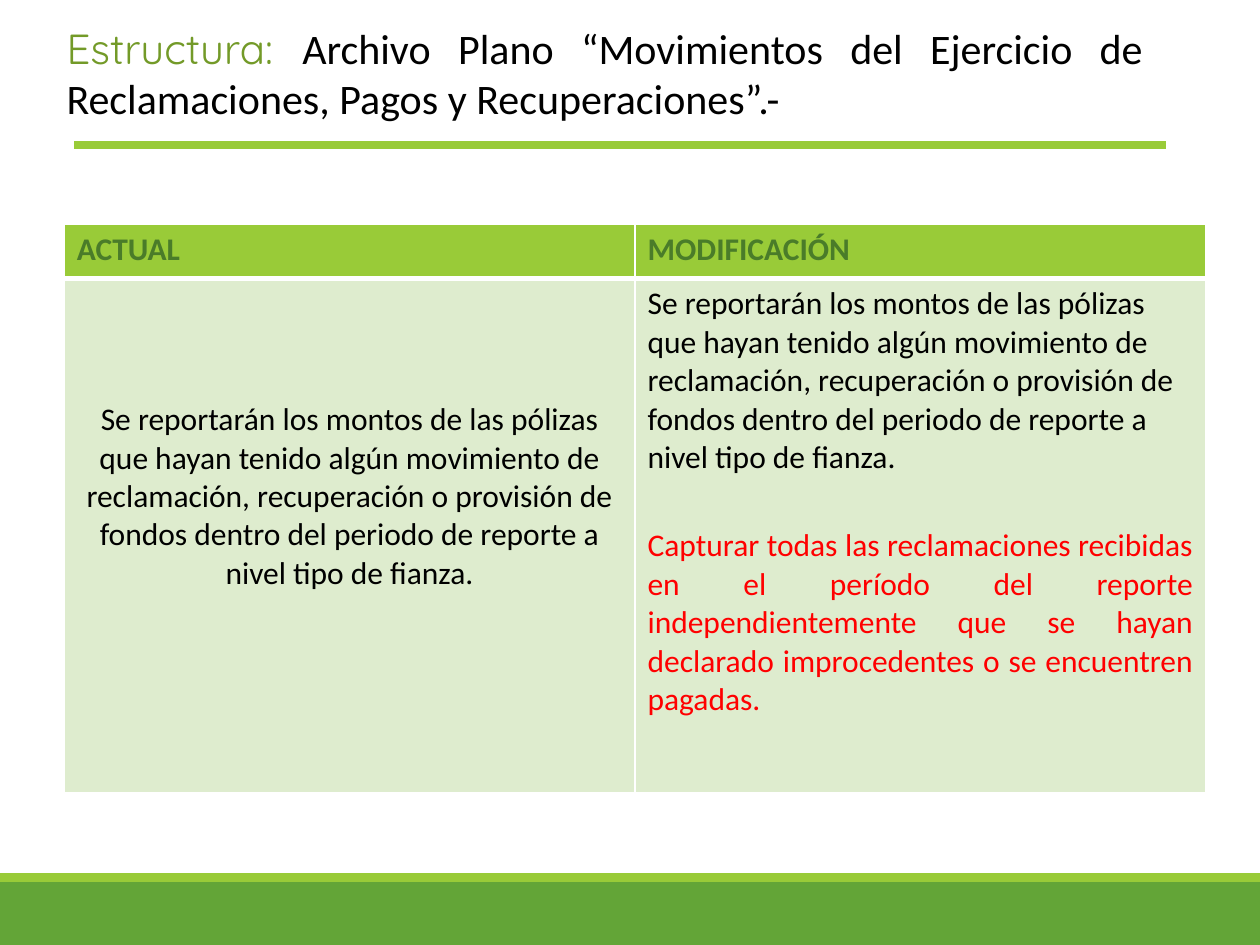
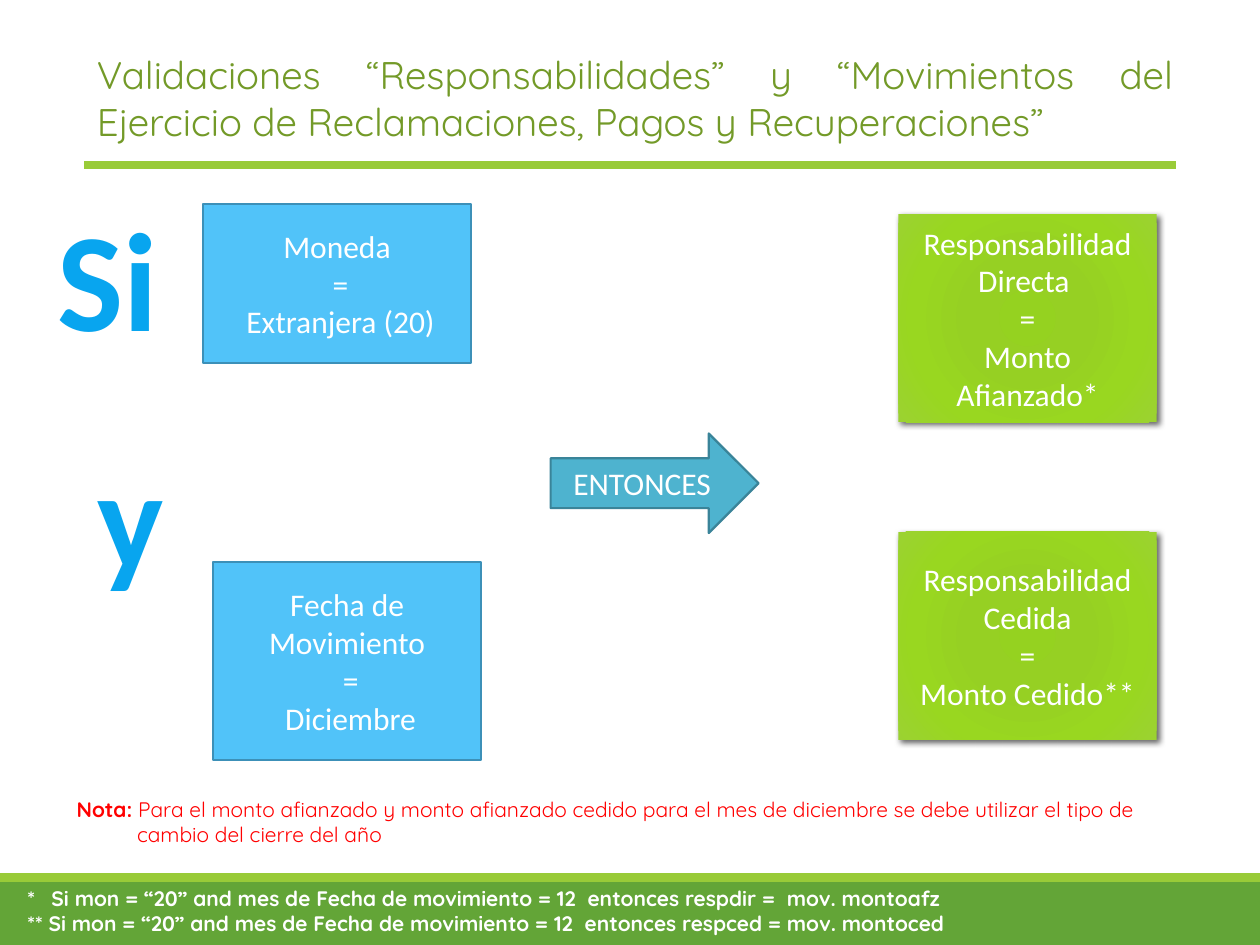
from dataclasses import dataclass

from pptx import Presentation
from pptx.dml.color import RGBColor
from pptx.enum.shapes import MSO_CONNECTOR as Connector, MSO_SHAPE as Shape
from pptx.enum.text import MSO_ANCHOR as Anchor, PP_ALIGN as Align
from pptx.oxml import parse_xml
from pptx.oxml.ns import nsdecls
from pptx.util import Inches, Pt


@dataclass(frozen=True)
class Theme:
    body_font: str = "Calibri"
    title_font: str = "Quicksand"
    white: str = "FFFFFF"
    black: str = "000000"
    red: str = "FF0000"
    band: str = "63A537"
    lime: str = "99CB38"
    title: str = "739A28"
    header_text: str = "4A7C29"
    cell: str = "DEECCE"
    condition: str = "51C3F9"
    condition_line: str = "3C90B8"
    arrow: str = "4EB3CF"
    arrow_line: str = "3A8499"
    keyword: str = "08A5EF"
    glow: tuple = ((0, "95D220"), (34, "96D023"), (70, "99D720"), (100, "9BD231"))
    title_size: float = 24
    long_title_size: float = 22
    body_size: float = 18
    note_size: float = 12
    keyword_size: float = 80


THEME = Theme()


def color(value):
    return RGBColor.from_string(value)


def inches(*lengths):
    return [Inches(length) for length in lengths]


# Text
def add_span(para, text, font=THEME.body_font, size=THEME.body_size,
             fill=THEME.black, bold=False):
    span = para.add_run()
    span.text = text
    span.font.name = font
    span.font.size = Pt(size)
    span.font.bold = bold
    span.font.color.rgb = color(fill)


def write(frame, paragraphs, align=Align.LEFT, **style):
    """Each paragraph is a string or a list of (text, style changes) pairs."""
    for index, content in enumerate(paragraphs):
        para = frame.add_paragraph() if index else frame.paragraphs[0]
        para.alignment = align
        spans = [(content, {})] if isinstance(content, str) else content
        for text, changes in spans:
            add_span(para, text, **{**style, **changes})


def add_text(page, place, paragraphs, wrap=True, **style):
    box = page.shapes.add_textbox(*inches(*place))
    box.text_frame.word_wrap = wrap
    write(box.text_frame, paragraphs, **style)
    return box


def hang(para, depth):
    properties = para._p.get_or_add_pPr()
    properties.set("marL", str(Inches(depth)))
    properties.set("indent", str(-Inches(depth)))


# Shapes
def add_box(page, place, paragraphs=(), kind=Shape.FLOWCHART_PROCESS,
            fill=None, line=None):
    box = page.shapes.add_shape(kind, *inches(*place))
    box.shadow.inherit = False
    if fill:
        box.fill.solid()
        box.fill.fore_color.rgb = color(fill)
    if line:
        box.line.color.rgb = color(line)
        box.line.width = Pt(1.25)
    else:
        box.line.fill.background()
    box.text_frame.word_wrap = True
    box.text_frame.vertical_anchor = Anchor.MIDDLE
    write(box.text_frame, paragraphs, align=Align.CENTER, fill=THEME.white)
    return box


def add_result(page, place, paragraphs):
    """A box with a radial gradient and a soft shadow."""
    box = add_box(page, place, paragraphs)
    stops = "".join(f'<a:gs pos="{pos * 1000}"><a:srgbClr val="{value}"/></a:gs>'
                    for pos, value in THEME.glow)
    gradient = parse_xml(
        f'<a:gradFill {nsdecls("a")} rotWithShape="1"><a:gsLst>{stops}</a:gsLst>'
        '<a:path path="circle"><a:fillToRect l="100000" t="100000" r="100000"'
        ' b="100000"/></a:path></a:gradFill>')
    shadow = parse_xml(
        f'<a:outerShdw {nsdecls("a")} blurRad="{Pt(3.5)}" dist="{Pt(2)}"'
        ' dir="2700000" algn="tl" rotWithShape="0"><a:srgbClr val="000000">'
        '<a:alpha val="60000"/></a:srgbClr></a:outerShdw>')
    box.line._ln.addprevious(gradient)
    box._element.spPr.find("{*}effectLst").append(shadow)


def add_rule(page, left, top, right):
    rule = page.shapes.add_connector(Connector.STRAIGHT,
                                     *inches(left, top, right, top))
    rule.line.color.rgb = color(THEME.lime)
    rule.line.width = Pt(4.5)
    rule._element.spPr.append(parse_xml(f'<a:effectLst {nsdecls("a")}/>'))


# Table
def format_cell(cell, fill, bottom=1):
    cell.fill.solid()
    cell.fill.fore_color.rgb = color(fill)
    widths = {"lnL": 1, "lnR": 1, "lnT": 1, "lnB": bottom}
    for position, (side, width) in enumerate(widths.items()):
        cell._tc.get_or_add_tcPr().insert(position, parse_xml(
            f'<a:{side} {nsdecls("a")} w="{Pt(width)}"><a:solidFill>'
            f'<a:srgbClr val="{THEME.white}"/></a:solidFill></a:{side}>'))


def add_comparison(page, place, row_heights, headers, current, changed):
    table = page.shapes.add_table(2, 2, *inches(*place)).table
    for row, height in zip(table.rows, row_heights):
        row.height = Inches(height)
    for column, header in enumerate(headers):
        cell = table.cell(0, column)
        format_cell(cell, THEME.lime, bottom=3)
        write(cell.text_frame, [header], fill=THEME.header_text, bold=True)

    before, after = table.cell(1, 0), table.cell(1, 1)
    for cell in (before, after):
        format_cell(cell, THEME.cell)
    before.margin_top = Inches(0.97)
    write(before.text_frame, [current], align=Align.CENTER)
    write(after.text_frame, [current, [(changed, {"fill": THEME.red})]])
    first, second = after.text_frame.paragraphs
    first.space_after = Pt(28.5)
    second.alignment = Align.JUSTIFY


# Slides
def add_page(deck, title_place, title, title_size, rule):
    page = deck.slides.add_slide(deck.slide_layouts[6])
    add_box(page, (0, 7, 10, 0.5), kind=Shape.RECTANGLE, fill=THEME.band)
    add_box(page, (0, 6.93, 10, 0.07), kind=Shape.RECTANGLE, fill=THEME.lime)
    add_rule(page, *rule)
    add_text(page, title_place, [title], align=Align.JUSTIFY,
             font=THEME.title_font, size=title_size, fill=THEME.title)
    return page


def build_structure(deck):
    title = [("Estructura: ", {}),
             ("Archivo Plano “Movimientos del Ejercicio de Reclamaciones, "
              "Pagos y Recuperaciones”.-",
              {"font": THEME.body_font, "fill": THEME.black})]
    page = add_page(deck, (0.43, 0.13, 8.74, 0.91), title, THEME.title_size,
                    rule=(0.59, 1.15, 9.25))
    add_comparison(
        page, (0.51, 1.78, 9.06, 4.51), (0.43, 4.08),
        headers=("ACTUAL", "MODIFICACIÓN"),
        current="Se reportarán los montos de las pólizas que hayan tenido algún "
                "movimiento de reclamación, recuperación o provisión de fondos "
                "dentro del periodo de reporte a nivel tipo de fianza.",
        changed="Capturar todas las reclamaciones recibidas en el período del "
                "reporte independientemente que se hayan declarado "
                "improcedentes o se encuentren pagadas.")


def build_validations(deck):
    page = add_page(deck, (0.67, 0.36, 8.74, 0.84),
                    "Validaciones “Responsabilidades” y “Movimientos del "
                    "Ejercicio de Reclamaciones, Pagos y Recuperaciones”",
                    THEME.long_title_size, rule=(0.67, 1.31, 9.33))

    # Conditions
    for place, lines in (
            ((1.61, 1.62, 2.13, 1.26), ["Moneda", " =", " Extranjera (20)"]),
            ((1.69, 4.46, 2.13, 1.57), ["Fecha de Movimiento", " =", " Diciembre"])):
        add_box(page, place, lines, fill=THEME.condition, line=THEME.condition_line)
    for place, word in (((0.35, 1.47, 1.01, 1.45), "Si"),
                        ((0.67, 3.36, 0.73, 1.45), "y")):
        add_text(page, place, [word], wrap=False, align=Align.CENTER,
                 size=THEME.keyword_size, fill=THEME.keyword, bold=True)

    # Results
    add_box(page, (4.37, 3.44, 1.65, 0.79), ["ENTONCES"], kind=Shape.RIGHT_ARROW,
            fill=THEME.arrow, line=THEME.arrow_line)
    for top, lines in ((1.7, ["Responsabilidad Directa ", "=", "Monto Afianzado*"]),
                       (4.22, ["Responsabilidad Cedida", "=", "Monto Cedido**"])):
        add_result(page, (7.13, top, 2.05, 1.65), lines)

    # Notes
    small = {"font": THEME.title_font, "size": THEME.note_size, "bold": True}
    footnotes = add_text(page, (0.12, 6.98, 9.13, 0.71), [
        "*\tSi mon = “20” and mes de Fecha de movimiento = 12  entonces "
        "respdir =  mov. montoafz",
        "** Si mon = “20” and mes de Fecha de movimiento = 12  entonces "
        "respced = mov. montoced"], fill=THEME.white, **small)
    hang(footnotes.text_frame.paragraphs[0], 0.19)
    note = add_text(page, (0.51, 6.27, 9.06, 0.5), [[
        ("Nota: ", {}),
        ("Para el monto afianzado y monto afianzado cedido para el mes de "
         "diciembre se debe utilizar el tipo de cambio del cierre del año",
         {"bold": False})]], fill=THEME.red, **small)
    hang(note.text_frame.paragraphs[0], 0.48)


def main():
    deck = Presentation()
    deck.slide_width, deck.slide_height = inches(10, 7.5)
    build_structure(deck)
    build_validations(deck)
    deck.save("out.pptx")


if __name__ == "__main__":
    main()
